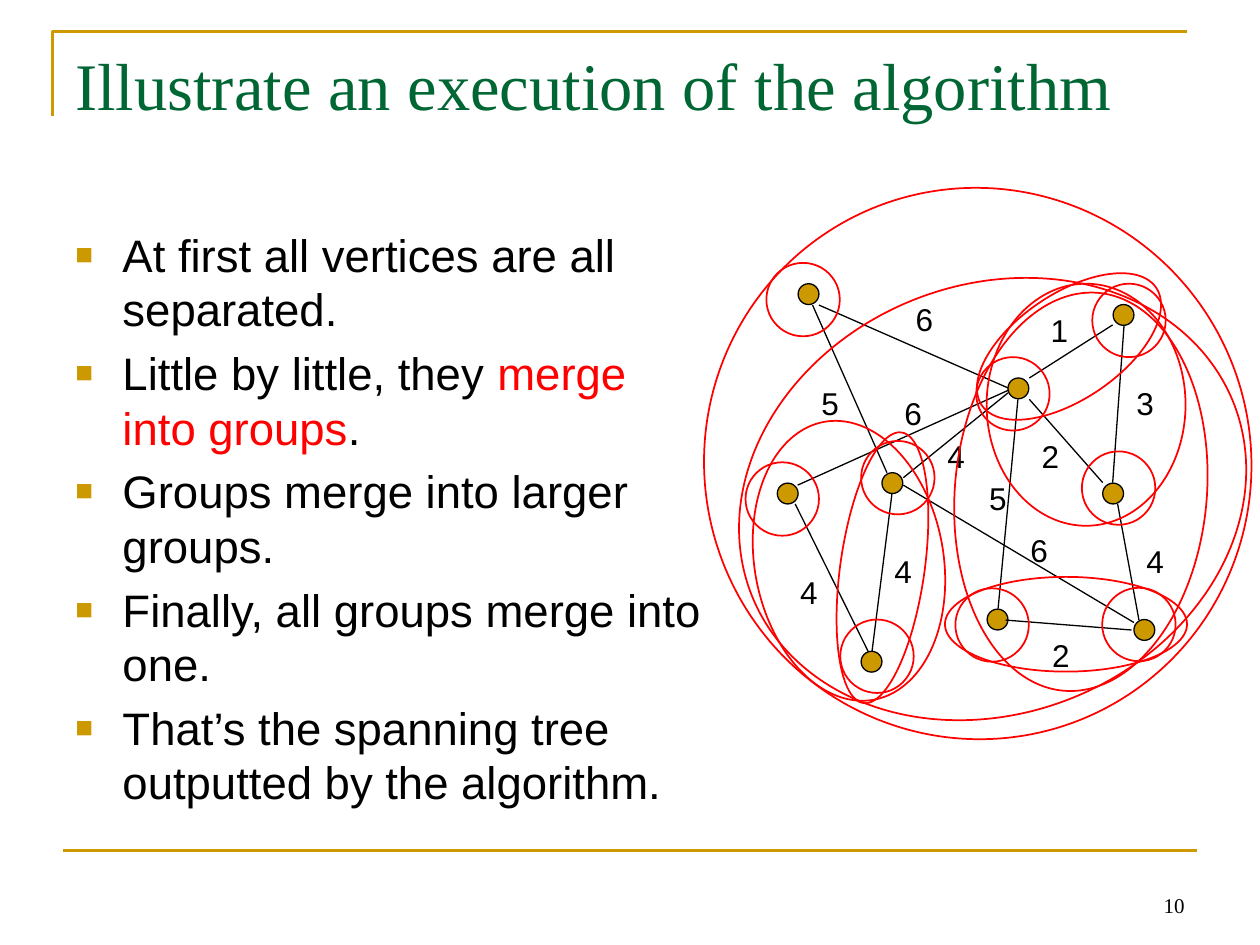
"""Build a slide showing how vertex groups merge into a spanning tree."""
from lxml.etree import SubElement
from pptx import Presentation
from pptx.dml.color import RGBColor
from pptx.enum.shapes import MSO_CONNECTOR, MSO_SHAPE
from pptx.enum.text import MSO_ANCHOR, MSO_AUTO_SIZE, PP_ALIGN
from pptx.oxml.ns import qn
from pptx.util import Cm, Pt

GOLD, GREEN, BLACK, RED = "CC9900", "006633", "000000", "FF0000"
SERIF, SANS = "Times New Roman", "Arial"

TITLE = "Illustrate an execution of the algorithm"
BULLETS = [
    [("At first all vertices are all separated.", BLACK)],
    [("Little by little, they ", BLACK), ("merge into groups", RED), (".", BLACK)],
    [("Groups merge into larger groups.", BLACK)],
    [("Finally, all groups merge into one.", BLACK)],
    [("That’s the spanning tree outputted by the algorithm.", BLACK)],
]
PAGE_NUMBER = "10"

# Vertex centre, then the direction in which its circle is shifted.
VERTICES = [
    (16.3, 5.93, -1, 1), (22.65, 6.35, 1, 1), (22.44, 9.95, 1, -1),
    (17.57, 13.34, 1, -1), (17.99, 9.74, 1, -1), (20.11, 12.49, -1, 1),
    (20.53, 7.83, -1, 1), (15.88, 9.95, -1, 1), (23.07, 12.7, -1, -1),
]
# Start, end, weight and top-left corner of the weight label.
EDGES = [
    ((16.38, 6.15), (17.88, 9.53), "5", (16.31, 7.62)),
    ((17.98, 9.96), (17.58, 13.13), "4", (17.78, 11)),
    ((16.03, 10.16), (17.5, 13.13), "4", (15.88, 11.43)),
    ((20.12, 12.27), (20.52, 8.05), "5", (19.69, 9.53)),
    ((20.75, 7.62), (22.43, 6.55), "1", (20.93, 6.15)),
    ((20.75, 8.05), (22.23, 9.73), "2", (20.75, 8.69)),
    ((20.27, 12.5), (22.81, 12.7), "2", (20.96, 12.7)),
    ((18.21, 9.78), (22.86, 12.55), "6", (20.52, 10.59)),
    ((18.21, 9.63), (20.32, 7.92), "4", (18.85, 8.69)),
    ((22.43, 9.73), (22.66, 6.55), "3", (22.66, 7.62)),
    ((22.53, 10.16), (22.96, 12.5), "4", (22.86, 10.8)),
    ((16.08, 9.78), (20.32, 7.87), "6", (17.98, 7.82)),
    ((16.51, 6.15), (20.32, 7.82), "6", (18.21, 5.92)),
]
# Left, top, width, height and rotation of each merged group.
GROUPS = [
    (19.43, 5.92, 4.24, 2.13, 326), (19.89, 5.72, 4.01, 4.88, 0),
    (19.25, 5.89, 5.08, 8.05, 5), (19.05, 11.63, 4.88, 1.91, 0),
    (16.94, 8.69, 1.7, 5.51, 8), (15.21, 8.46, 3.81, 5.69, 350),
    (14.78, 5.74, 10.46, 8.64, 338), (14.2, 3.78, 11.02, 11.13, 338),
]
VERTEX_SIZE, CIRCLE_SIZE, CIRCLE_SHIFT = 0.42, 1.48, 0.11


def color(value):
    return RGBColor.from_string(value)


def add_line(shapes, start, end, line_color, width):
    line = shapes.add_connector(MSO_CONNECTOR.STRAIGHT, *map(Cm, start + end))
    line.line.color.rgb = color(line_color)
    line.line.width = Pt(width)
    SubElement(line._element.spPr, qn("a:effectLst"))


def add_ellipse(shapes, box, line_color, width, fill=None, rotation=0):
    ellipse = shapes.add_shape(MSO_SHAPE.OVAL, *map(Cm, box))
    ellipse.shadow.inherit = False
    ellipse.rotation = rotation
    ellipse.line.color.rgb = color(line_color)
    ellipse.line.width = Pt(width)
    if fill:
        ellipse.fill.solid()
        ellipse.fill.fore_color.rgb = color(fill)
    else:
        ellipse.fill.background()


def square(center_x, center_y, size):
    return center_x - size / 2, center_y - size / 2, size, size


def add_text(shapes, box, paragraphs, font, size, wrap=True):
    frame = shapes.add_textbox(*map(Cm, box)).text_frame
    frame.word_wrap = wrap
    for index, runs in enumerate(paragraphs):
        paragraph = frame.add_paragraph() if index else frame.paragraphs[0]
        paragraph.font.name = font
        paragraph.font.size = Pt(size)
        for text, text_color in runs:
            run = paragraph.add_run()
            run.text = text
            run.font.color.rgb = color(text_color)
    return frame


def add_bullet(paragraph):
    paragraph.space_before = Pt(5.2)
    properties = paragraph._p.get_or_add_pPr()
    properties.set("marL", str(Cm(0.95)))
    properties.set("indent", str(-Cm(0.95)))
    bullet_color = SubElement(properties, qn("a:buClr"))
    SubElement(bullet_color, qn("a:srgbClr"), val=GOLD)
    SubElement(properties, qn("a:buSzPct"), val="65000")
    SubElement(properties, qn("a:buFont"), typeface=SANS)
    SubElement(properties, qn("a:buChar"), char="■")
    defaults = properties.find(qn("a:defRPr"))
    if defaults is not None:
        properties.append(defaults)


def add_frame(shapes):
    builder = shapes.build_freeform(Cm(1.06), Cm(2.33))
    builder.add_line_segments([(Cm(1.06), Cm(0.64)), (Cm(23.92), Cm(0.64))], close=False)
    corner = builder.convert_to_shape()
    corner.shadow.inherit = False
    corner.fill.background()
    corner.line.color.rgb = color(GOLD)
    corner.line.width = Pt(1.5)
    add_line(shapes, (1.27, 17.15), (24.13, 17.15), GOLD, 1.5)


def add_graph(shapes):
    vertex_group = shapes.add_group_shape()
    for x, y, _, _ in VERTICES:
        add_ellipse(vertex_group.shapes, square(x, y, VERTEX_SIZE), BLACK, 0.75, GOLD)
    for start, end, _, _ in EDGES:
        add_line(shapes, start, end, BLACK, 0.75)
    for _, _, weight, corner in EDGES:
        frame = add_text(shapes, (*corner, 0.86, 1.02), [[(weight, BLACK)]], SANS, 18, False)
        frame.auto_size = MSO_AUTO_SIZE.SHAPE_TO_FIT_TEXT
    for x, y, right, down in VERTICES:
        box = square(x + right * CIRCLE_SHIFT, y + down * CIRCLE_SHIFT, CIRCLE_SIZE)
        add_ellipse(shapes, box, RED, 1)
    for *box, rotation in GROUPS:
        add_ellipse(shapes, box, RED, 1, rotation=rotation)


def main():
    presentation = Presentation()
    presentation.slide_width, presentation.slide_height = Cm(25.4), Cm(19.05)
    shapes = presentation.slides.add_slide(presentation.slide_layouts[6]).shapes
    add_frame(shapes)
    add_text(shapes, (1.27, 0.76, 22.86, 3.18), [[(TITLE, GREEN)]], SERIF, 38)
    body = add_text(shapes, (1.27, 4.45, 13.34, 12.57), BULLETS, SANS, 26)
    for paragraph in body.paragraphs:
        add_bullet(paragraph)
    add_graph(shapes)
    number = add_text(shapes, (18.21, 17.35, 5.92, 1.27), [[(PAGE_NUMBER, BLACK)]], SERIF, 12)
    number.vertical_anchor = MSO_ANCHOR.BOTTOM
    number.paragraphs[0].alignment = PP_ALIGN.RIGHT
    presentation.save("out.pptx")


if __name__ == "__main__":
    main()
